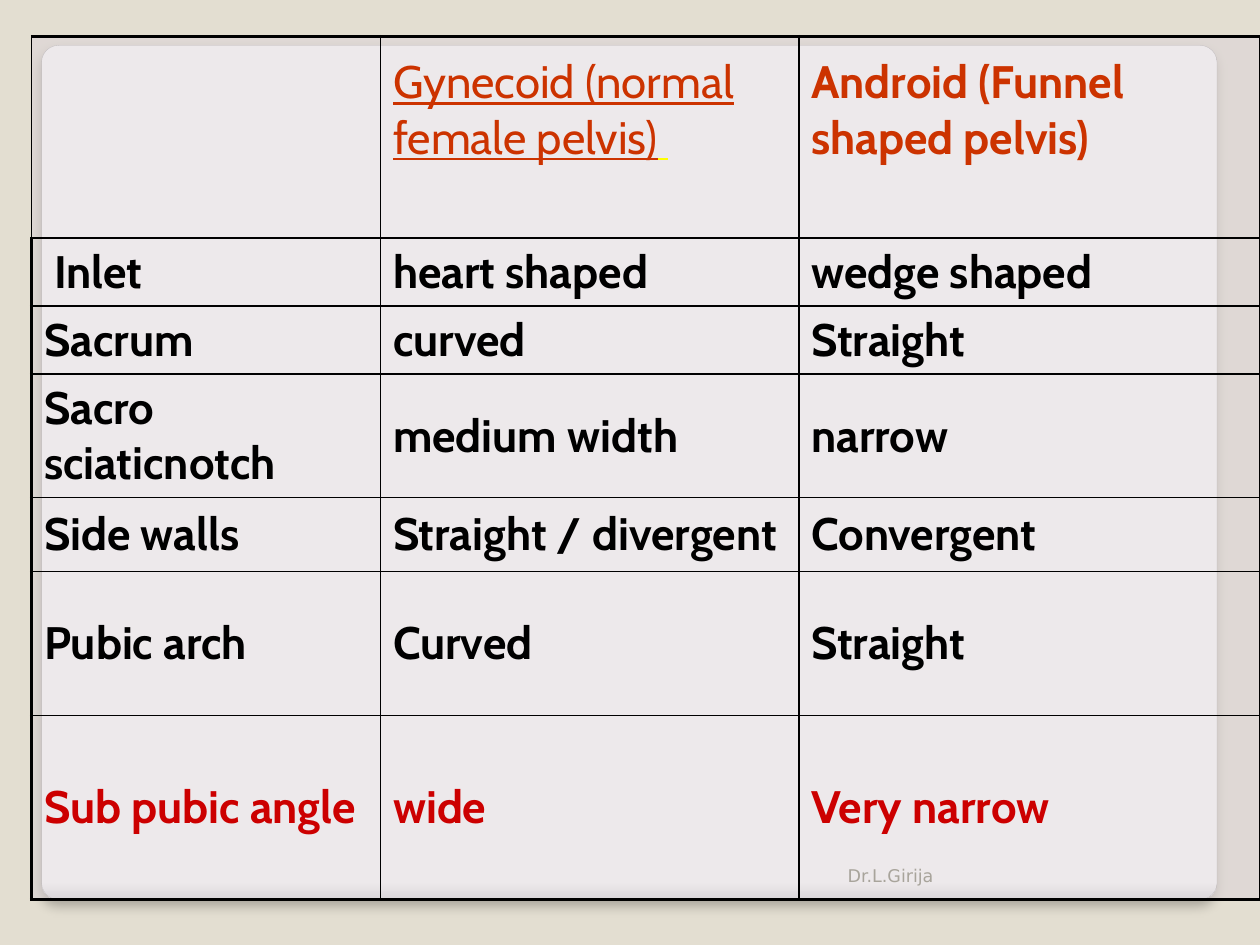
from dataclasses import dataclass

from lxml.etree import SubElement
from pptx import Presentation
from pptx.dml.color import RGBColor
from pptx.enum.shapes import MSO_SHAPE as Shape
from pptx.enum.text import MSO_ANCHOR as Anchor
from pptx.oxml import parse_xml
from pptx.oxml.ns import nsdecls, qn
from pptx.util import Inches, Pt

BEIGE = RGBColor(0xE3, 0xDE, 0xD1)
WHITE = RGBColor(0xFF, 0xFF, 0xFF)
PANEL_EDGE = RGBColor(0xDA, 0xDA, 0xDA)
PANEL_LINE = RGBColor(0xA4, 0xA4, 0xA4)
MAUVE = RGBColor(0xDC, 0xD4, 0xD9)
BLACK = RGBColor(0, 0, 0)
ORANGE = RGBColor(0xCC, 0x33, 0x00)
YELLOW = RGBColor(0xFF, 0xFF, 0x00)
RED = RGBColor(0xCC, 0, 0)
GREY = RGBColor(0xA8, 0xA4, 0x9B)

THIN, THICK = 1, 2.25
COLUMN_WIDTHS = (2.77, 3.32, 3.67)


@dataclass(frozen=True)
class Feature:
    name: str
    gynecoid: str
    android: str
    height: float
    color: RGBColor = BLACK


FEATURES = (
    Feature("", "Gynecoid (normal female pelvis)",
            "Android (Funnel shaped pelvis)", 1.6, ORANGE),
    Feature("Inlet", "heart shaped", "wedge shaped", 0.54),
    Feature("Sacrum", "curved", "Straight", 0.54),
    Feature("Sacro sciaticnotch", "medium width", "narrow", 0.6),
    Feature("Side walls", "Straight / divergent", "Convergent", 0.59),
    Feature("Pubic arch", "Curved", "Straight", 1.14),
    Feature("Sub pubic angle", "wide", "Very narrow", 1.46, RED),
)


def add_run(paragraph, text: str, **font_format):
    run = paragraph.add_run()
    run.text = text
    color = font_format.pop("color")
    for attribute, value in font_format.items():
        setattr(run.font, attribute, value)
    run.font.color.rgb = color


def set_borders(cell, widths: dict[str, float]):
    properties = cell._tc.get_or_add_tcPr()
    for position, (side, width) in enumerate(widths.items()):
        properties.insert(position, parse_xml(
            f'<a:ln{side} {nsdecls("a")} w="{Pt(width)}"><a:solidFill>'
            f'<a:srgbClr val="{BLACK}"/></a:solidFill></a:ln{side}>'))


def fill_half_transparent(cell, color: RGBColor):
    cell.fill.solid()
    cell.fill.fore_color.rgb = color
    tint = cell._tc.tcPr.find(qn("a:solidFill")).find(qn("a:srgbClr"))
    SubElement(tint, qn("a:alpha"), val="50000")


def add_panel(slide):
    panel = slide.shapes.add_shape(
        Shape.ROUNDED_RECTANGLE,
        Inches(0.33), Inches(0.36), Inches(9.33), Inches(6.78))
    panel.adjustments[0] = 0.02
    panel.fill.gradient()
    panel.fill.gradient_angle = 270
    stops = panel.fill.gradient_stops
    for stop, color, position in zip(stops, (WHITE, PANEL_EDGE), (0.98, 1)):
        stop.color.rgb = color
        stop.position = position
    panel.line.color.rgb = PANEL_LINE
    panel.line.width = Pt(0.16)
    panel.shadow.inherit = False
    panel._element.spPr.find(qn("a:effectLst")).append(parse_xml(
        f'<a:outerShdw {nsdecls("a")} blurRad="{Pt(6)}" dist="{Pt(4)}" '
        f'dir="5400000" rotWithShape="0"><a:srgbClr val="{BLACK}">'
        '<a:alpha val="25000"/></a:srgbClr></a:outerShdw>'))


def add_comparison(slide):
    last_row, last_column = len(FEATURES) - 1, len(COLUMN_WIDTHS) - 1
    table = slide.shapes.add_table(
        len(FEATURES), len(COLUMN_WIDTHS), Inches(0.25), Inches(0.29),
        Inches(sum(COLUMN_WIDTHS)),
        Inches(sum(feature.height for feature in FEATURES))).table
    table.first_row = table.horz_banding = False
    for column, width in zip(table.columns, COLUMN_WIDTHS):
        column.width = Inches(width)

    for r, feature in enumerate(FEATURES):
        table.rows[r].height = Inches(feature.height)
        texts = (feature.name, feature.gynecoid, feature.android)
        for c, text in enumerate(texts):
            cell = table.cell(r, c)
            cell.vertical_anchor = Anchor.MIDDLE
            fill_half_transparent(cell, MAUVE)
            set_borders(cell, {
                "L": THICK if c == 0 and r > 0 else THIN,
                "R": THICK if c == last_column else THIN,
                "T": THICK if r == 0 else THIN,
                "B": THICK if r == last_row else THIN,
            })
            if not text:
                continue
            underlined = (r, c) == (0, 1)
            style = dict(name="Cabin", size=Pt(26), bold=not underlined,
                         underline=underlined)
            paragraph = cell.text_frame.paragraphs[0]
            add_run(paragraph, text, color=feature.color, **style)
            if underlined:
                add_run(paragraph, " ", color=YELLOW, **style)
            if r == 0:
                cell.margin_bottom = Inches(0.48)

    table.cell(1, 0).margin_left = Inches(0.18)


def add_author(slide):
    frame = slide.shapes.add_textbox(
        Inches(6.63), Inches(6.68), Inches(2.5), Inches(0.4)).text_frame
    frame.word_wrap = True
    frame.vertical_anchor = Anchor.BOTTOM
    add_run(frame.paragraphs[0], "Dr.L.Girija",
            name="DejaVu Sans", size=Pt(10), color=GREY)


def main():
    deck = Presentation()
    deck.slide_width, deck.slide_height = Inches(10), Inches(7.5)
    slide = deck.slides.add_slide(deck.slide_layouts[6])
    slide.background.fill.solid()
    slide.background.fill.fore_color.rgb = BEIGE
    add_panel(slide)
    add_comparison(slide)
    add_author(slide)
    deck.save("out.pptx")


if __name__ == "__main__":
    main()
